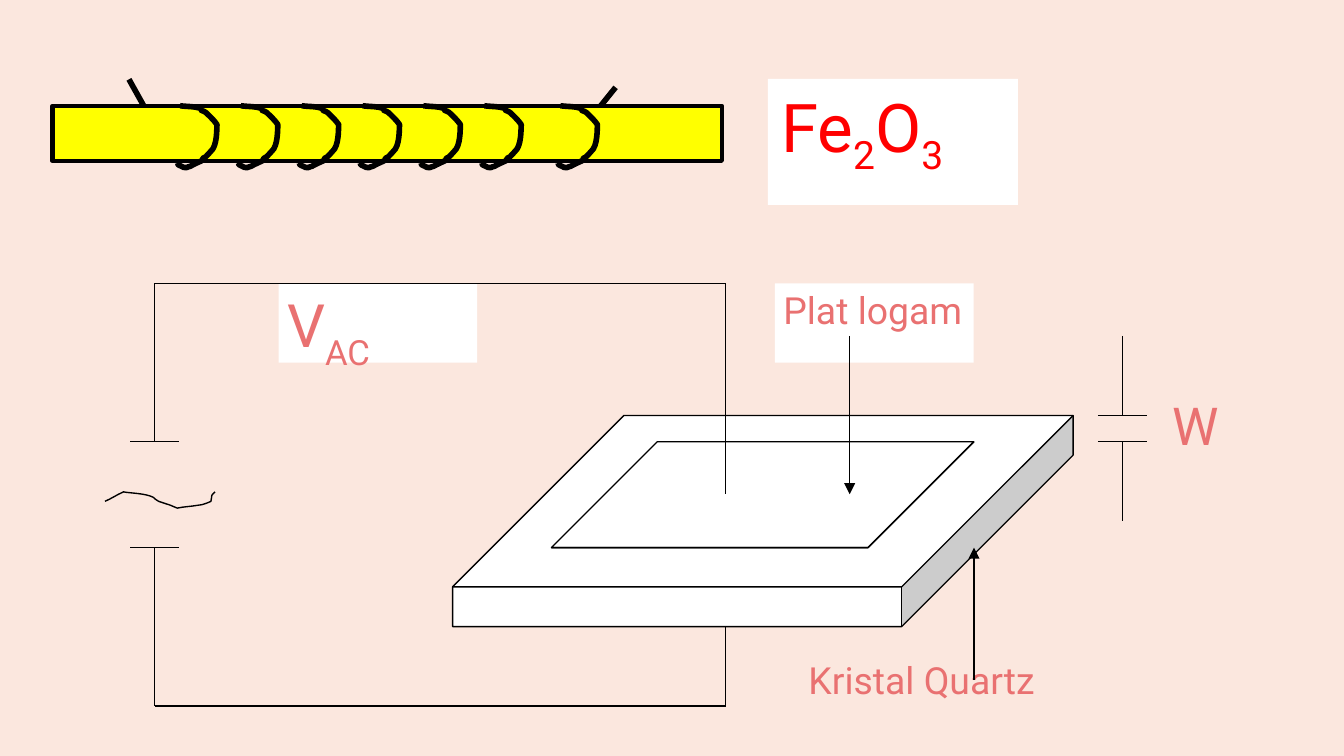
from lxml.etree import SubElement
from pptx import Presentation
from pptx.dml.color import RGBColor
from pptx.enum.shapes import MSO_CONNECTOR as Connector, MSO_SHAPE as Preset
from pptx.enum.text import MSO_ANCHOR as Anchor, PP_ALIGN as Align
from pptx.oxml.ns import qn
from pptx.util import Pt

PEACH = RGBColor(0xFB, 0xE7, 0xDE)
YELLOW = RGBColor(0xFF, 0xFF, 0x00)
WHITE = RGBColor(0xFF, 0xFF, 0xFF)
BLACK = RGBColor(0x00, 0x00, 0x00)
RED = RGBColor(0xFF, 0x00, 0x00)
CORAL = RGBColor(0xE9, 0x71, 0x71)
FONT = "Roboto"
THIN, THICK = 0.75, 3

# Labels: box, fill, insets (x, y), size, colour, space after, runs (text, baseline in %)
FORMULA = ((411.4, 42.3, 133.9, 67.5), WHITE, (7.2, 3.6), 36, RED, 10,
           [("Fe", 0), ("2", -25), ("O", 0), ("3", -25)])
VOLTAGE = ((149.3, 151.8, 106.4, 42.5), WHITE, (4.5, 2.25), 32, CORAL, 0,
           [("V", 0), ("AC", -30)])
METAL_PLATE = ((415.2, 151.8, 106.4, 42.5), WHITE, (4.5, 2.25), 20, CORAL, 0,
               [("Plat logam", 0)])
QUARTZ = ((428.6, 349.9, 133.2, 42.5), None, (4.5, 2.25), 20, CORAL, 0,
          [("Kristal Quartz", 0)])
GAP_WIDTH = ((628, 208.5, 26.6, 42.5), None, (0, 2.25), 28, CORAL, 0, [("W", 0)])

# Solids: preset, box, fill, line width, adjustment
ROD = (Preset.RECTANGLE, (28.1, 56.7, 358.6, 29.5), YELLOW, 2.25, None)
CRYSTAL = (Preset.CUBE, (242.5, 222.6, 332.4, 113.1), WHITE, THIN, 0.812)
PLATE = (Preset.CUBE, (295.4, 236.7, 226.3, 56.7), WHITE, THIN, 1)

# Curves: start, then (control, control, end) for each segment
COIL_START = (2.9, 0)
COIL_SEGMENTS = [
    ((8, 0.6), (10.1, 0.2), (13.9, 1.4)),
    ((15.4, 4.3), (13.2, 1.4), (16.7, 3.6)),
    ((19, 5.8), (21.2, 7.9), (22.7, 10.1)),
    ((22.5, 12.2), (22.9, 21.6), (19.3, 24.5)),
    ((18.5, 25.2), (17.6, 26.6), (16.6, 27.4)),
    ((16.1, 27.4), (15.7, 28.1), (15.2, 28.1)),
    ((14.7, 28.8), (14.9, 29.5), (14.4, 29.5)),
    ((14.4, 29.5), (9.4, 31.7), (8.4, 32.4)),
    ((7.8, 32.4), (6.4, 33.1), (6.4, 33.1)),
    ((5.2, 33.1), (4.3, 33.1), (3.6, 32.4)),
    ((0, 31), (3, 31), (0.9, 31)),
]
COIL_TOP = 56.7
COIL_LEFTS = [93.6 + 32.6 * turn for turn in range(6)] + [297.4]
WAVE_START = (56.2, 268.6)
WAVE_SEGMENTS = [
    ((59.8, 267.1), (62.6, 265), (66.2, 263.5)),
    ((69.1, 264.2), (77.8, 264.2), (82.1, 266.4)),
    ((82.8, 267.1), (83.5, 267.8), (85, 268.6)),
    ((87.1, 269.3), (89.3, 270), (91.4, 270.7)),
    ((92.9, 271.4), (95, 272.2), (95, 272.2)),
    ((98.6, 271.4), (102.2, 271.4), (105.8, 270.7)),
    ((108.7, 270.7), (113, 268.6), (113, 268.6)),
    ((113.8, 264.2), (113, 265.7), (115.2, 263.5)),
]

# Straight lines: x1, y1, x2, y2
COIL_LEADS = [(77, 56.7, 69.1, 42.5), (329.8, 46.8, 321.8, 56.7)]
SOURCE_X, CONTACT_X, GAP_X = 82.9, 388.8, 601.4
TOP_Y, BOTTOM_Y = 151.8, 378.2
UPPER_POLE_Y, LOWER_POLE_Y = 236.7, 293.4
GAP_TOP, GAP_BOTTOM = 222.6, 236.7
POLE_HALF = 13.2
CIRCUIT = [
    (CONTACT_X, TOP_Y, CONTACT_X, 264.8),
    (CONTACT_X, 335.7, CONTACT_X, BOTTOM_Y),
    (CONTACT_X, TOP_Y, SOURCE_X, TOP_Y),
    (CONTACT_X, BOTTOM_Y, SOURCE_X, BOTTOM_Y),
    (SOURCE_X, LOWER_POLE_Y, SOURCE_X, BOTTOM_Y),
    (SOURCE_X, TOP_Y, SOURCE_X, UPPER_POLE_Y),
] + [(SOURCE_X - POLE_HALF, y, SOURCE_X + POLE_HALF, y)
     for y in (UPPER_POLE_Y, LOWER_POLE_Y)]
POINTERS = [(521.8, 364.3, 521.8, 293.4), (455.2, 180, 455.2, 264.8)]
GAP_MARKS = [(GAP_X - POLE_HALF, y, GAP_X + POLE_HALF, y)
             for y in (GAP_TOP, GAP_BOTTOM)] + [
    (GAP_X, 180, GAP_X, GAP_TOP),
    (GAP_X, GAP_BOTTOM, GAP_X, 279.1),
]


def set_line(shape, width):
    shape.line.color.rgb = BLACK
    shape.line.width = Pt(width)


def add_solid(shapes, preset, box, fill, width=None, adjustment=None):
    solid = shapes.add_shape(preset, *map(Pt, box))
    solid.shadow.inherit = False
    solid.fill.solid()
    solid.fill.fore_color.rgb = fill
    if width is None:
        solid.line.fill.background()
    else:
        set_line(solid, width)
    if adjustment is not None:
        solid.adjustments[0] = adjustment
    return solid


def add_label(shapes, box, fill, insets, size, color, space_after, runs):
    if fill is None:
        label = shapes.add_textbox(*map(Pt, box))
    else:
        label = add_solid(shapes, Preset.RECTANGLE, box, fill)
    frame = label.text_frame
    side, edge = map(Pt, insets)
    frame_format = {"word_wrap": True, "vertical_anchor": Anchor.TOP,
                    "margin_left": side, "margin_right": side,
                    "margin_top": edge, "margin_bottom": edge}
    for name, value in frame_format.items():
        setattr(frame, name, value)
    paragraph = frame.paragraphs[0]
    paragraph.alignment = Align.LEFT
    paragraph.space_after = Pt(space_after)
    for text, baseline in runs:
        run = paragraph.add_run()
        run.text = text
        for name, value in {"name": FONT, "size": Pt(size)}.items():
            setattr(run.font, name, value)
        run.font.color.rgb = color
        if baseline:
            run._r.get_or_add_rPr().set("baseline", str(baseline * 1000))


def add_curve(shapes, start, segments, width, left=0, top=0):
    """Outline the control points, then turn every three steps into one Bezier."""
    points = [start] + [point for segment in segments for point in segment]
    placed = [(Pt(left + x), Pt(top + y)) for x, y in points]
    builder = shapes.build_freeform(*placed[0])
    builder.add_line_segments(placed[1:], close=False)
    curve = builder.convert_to_shape()
    outline = next(curve._element.iter(qn("a:path")))
    straights = outline.findall(qn("a:lnTo"))
    for first in range(0, len(straights), 3):
        bezier = SubElement(outline, qn("a:cubicBezTo"))
        for straight in straights[first:first + 3]:
            bezier.append(straight[0])
            outline.remove(straight)
    curve.shadow.inherit = False
    curve.fill.background()
    set_line(curve, width)


def add_straights(shapes, lines, width, arrow=False):
    for ends in lines:
        straight = shapes.add_connector(Connector.STRAIGHT, *map(Pt, ends))
        set_line(straight, width)
        if arrow:
            SubElement(straight.line._get_or_add_ln(), qn("a:tailEnd"), type="triangle")
        SubElement(straight._element.spPr, qn("a:effectLst"))


def main():
    deck = Presentation()
    deck.slide_width, deck.slide_height = Pt(720), Pt(405)
    slide = deck.slides.add_slide(deck.slide_layouts[6])
    slide.background.fill.solid()
    slide.background.fill.fore_color.rgb = PEACH

    antenna = slide.shapes.add_group_shape().shapes
    add_solid(antenna, *ROD)
    for left in COIL_LEFTS:
        add_curve(antenna, COIL_START, COIL_SEGMENTS, THICK, left, COIL_TOP)
    add_straights(antenna, COIL_LEADS, THICK)
    add_label(antenna, *FORMULA)

    oscillator = slide.shapes.add_group_shape().shapes
    add_label(oscillator, *VOLTAGE)
    for solid in (CRYSTAL, PLATE):
        add_solid(oscillator, *solid)
    add_straights(oscillator, CIRCUIT, THIN)
    add_curve(oscillator, WAVE_START, WAVE_SEGMENTS, THIN)
    for label in (METAL_PLATE, QUARTZ):
        add_label(oscillator, *label)
    add_straights(oscillator, POINTERS, THIN, arrow=True)
    add_straights(oscillator, GAP_MARKS, THIN)
    add_label(oscillator, *GAP_WIDTH)
    deck.save("out.pptx")


if __name__ == "__main__":
    main()
